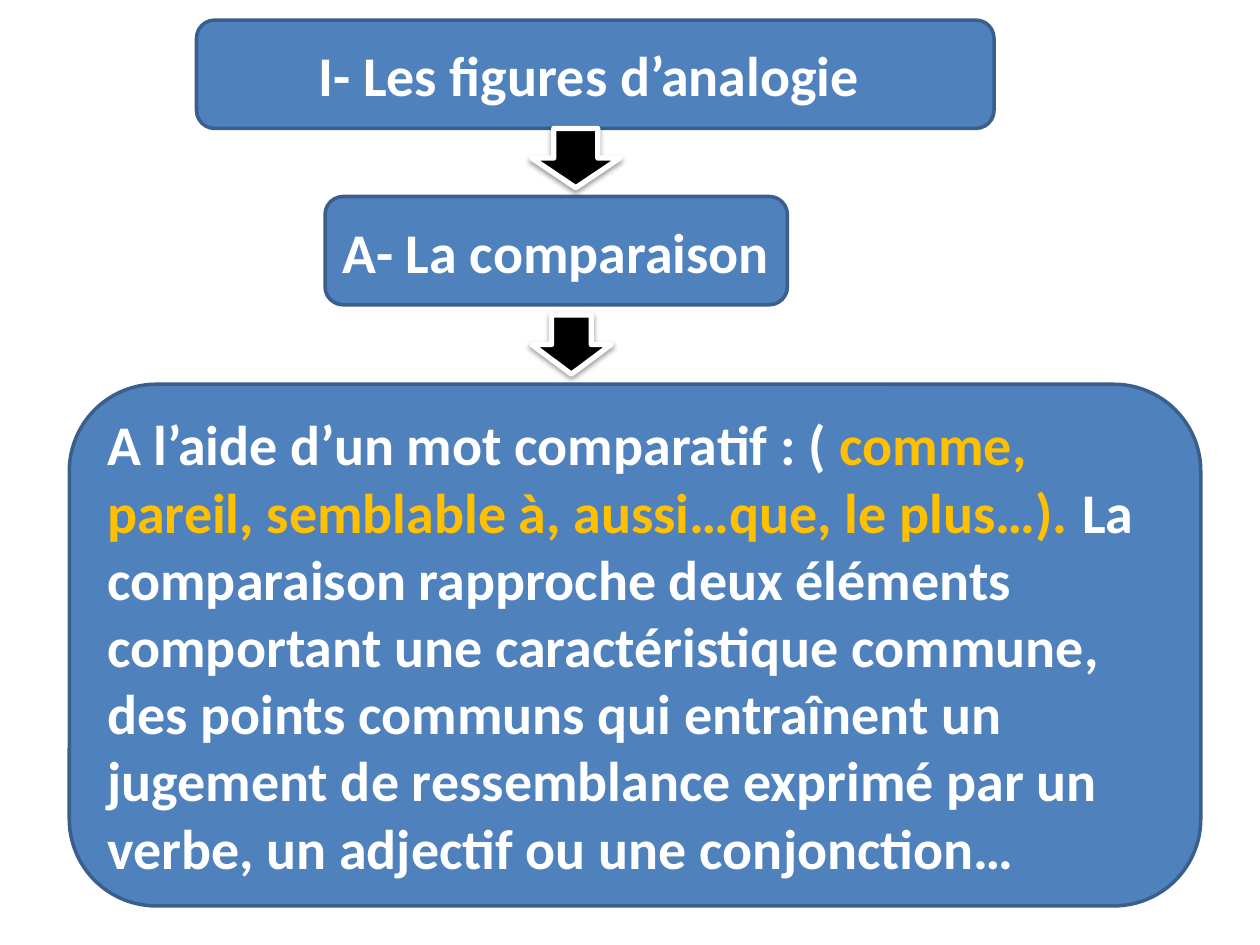
"""Build the slide on analogy figures and comparison."""
from lxml import etree
from pptx import Presentation
from pptx.dml.color import RGBColor
from pptx.enum import shapes, text
from pptx.oxml.ns import qn
from pptx.util import Inches, Pt

BLUE = RGBColor(0x4F, 0x81, 0xBD)
NAVY = RGBColor(0x3A, 0x5F, 0x8C)
GOLD = RGBColor(0xFF, 0xC0, 0x00)
WHITE = RGBColor(0xFF, 0xFF, 0xFF)
BLACK = RGBColor(0x00, 0x00, 0x00)

prs = Presentation()
prs.slide_width, prs.slide_height = Inches(10), Inches(7.5)
s = prs.slides.add_slide(prs.slide_layouts[6])


def add_run(p, words, color=WHITE, size=32, font="Calibri", bold=True):
    r = p.add_run()
    r.text = words
    r.font.name, r.font.size, r.font.bold = font, Pt(size), bold
    r.font.color.rgb = color


def add_shape(kind, box, fill, line, width):
    sp = s.shapes.add_shape(kind, *[Inches(v) for v in box])
    sp.fill.solid()
    sp.fill.fore_color.rgb = fill
    sp.line.color.rgb = line
    sp.line.width = Pt(width)
    sp.shadow.inherit = False
    return sp


boxes = [
    ((1.56, 0.16, 6.33, 0.86), text.PP_ALIGN.CENTER,
     [("I- Les figures d’analogie ", WHITE)]),
    ((2.58, 1.56, 3.67, 0.86), text.PP_ALIGN.CENTER,
     [("A- La comparaison", WHITE)]),
    ((0.55, 3.05, 8.98, 4.14), text.PP_ALIGN.LEFT,
     [("A l’aide d’un mot comparatif : ( ", WHITE),
      ("comme, pareil, semblable à, aussi…que, le plus…). ", GOLD),
      ("La comparaison rapproche deux éléments comportant une caractéristique "
       "commune, des points communs qui entraînent un jugement de ressemblance "
       "exprimé par un verbe, un adjectif ou une conjonction…", WHITE)]),
]
for box, align, runs in boxes:
    sp = add_shape(shapes.MSO_SHAPE.ROUNDED_RECTANGLE, box, BLUE, NAVY, 2)
    tf = sp.text_frame
    tf.word_wrap = True
    tf.vertical_anchor = text.MSO_ANCHOR.MIDDLE
    p = tf.paragraphs[0]
    p.alignment = align
    for words, color in runs:
        add_run(p, words, color=color)

for box in [(4.22, 1.02, 0.7, 0.47), (4.22, 2.5, 0.63, 0.47)]:
    sp = add_shape(shapes.MSO_SHAPE.DOWN_ARROW, box, BLACK, WHITE, 3)
    effects = sp.element.spPr.find(qn("a:effectLst"))
    shadow = etree.SubElement(effects, qn("a:outerShdw"), blurRad=str(Pt(3.1)),
                              dist=str(Pt(1.6)), dir="5400000", rotWithShape="0")
    tint = etree.SubElement(shadow, qn("a:srgbClr"), val=str(BLACK))
    etree.SubElement(tint, qn("a:alpha"), val="38000")

prs.save("out.pptx")
